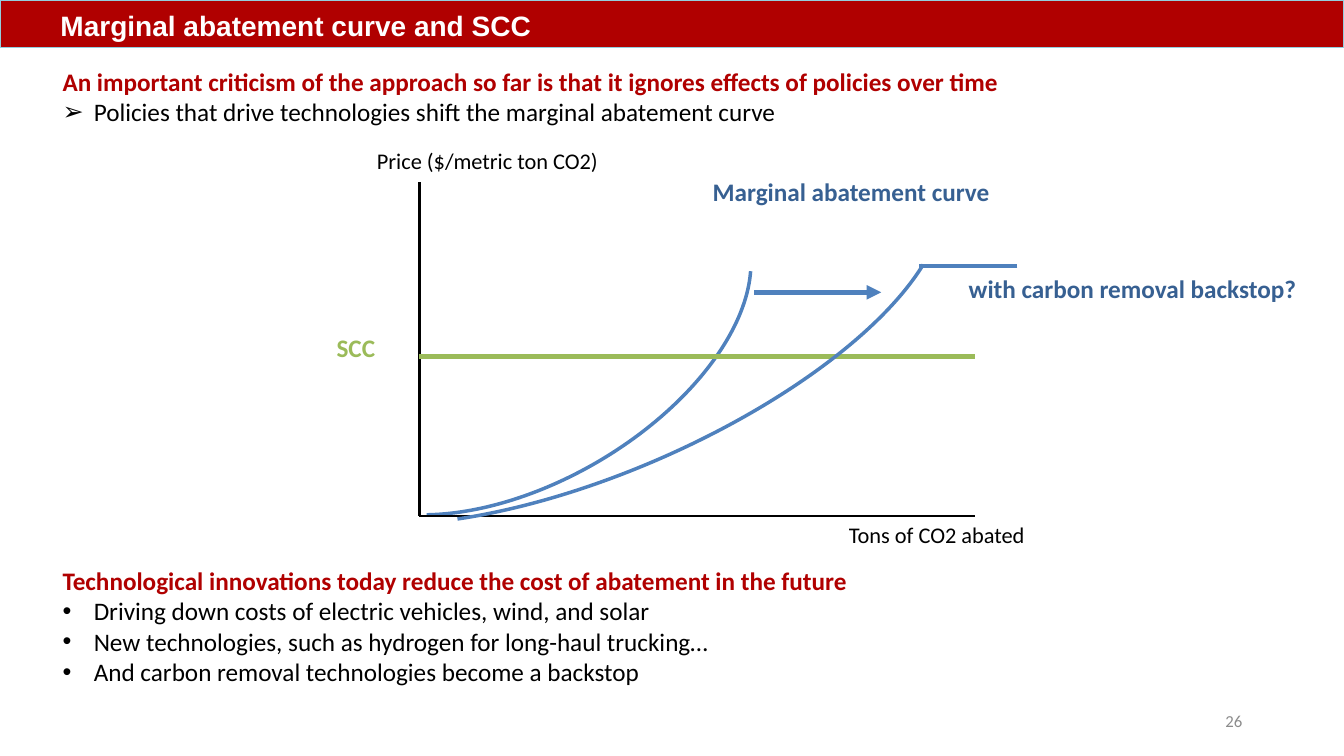
from pptx import Presentation
from pptx import util as u
from pptx.dml.color import RGBColor
from pptx.enum import shapes, text
from pptx.oxml.ns import qn
from lxml import etree

RED, BLUE, NAVY, GREEN = "B00000", "4F81BD", "376092", "9BBB59"
BLACK, WHITE, GRAY = "000000", "FFFFFF", "8C8C8C"
ORIGIN_X, ORIGIN_Y, END_X = 4.16, 5.12, 9.67


def rgb(code):
    """Turn a hex string into a colour."""
    return RGBColor.from_string(code)


def place(shape, left, top, width, height):
    """Set the position and size of a shape."""
    shape.left, shape.top = u.Inches(left), u.Inches(top)
    shape.width, shape.height = u.Inches(width), u.Inches(height)


def style(para, size, color, bold=False, font="Calibri"):
    """Format the runs of a paragraph."""
    for run in para.runs:
        run.font.name, run.font.size, run.font.bold = font, u.Pt(size), bold
        run.font.color.rgb = rgb(color)


def label(slide, words, box, size, color, bold=False):
    """Add a text box with one line and return it."""
    shape = slide.shapes.add_textbox(*map(u.Inches, box))
    frame = shape.text_frame
    frame.word_wrap = True
    frame.text = words
    style(frame.paragraphs[0], size, color, bold)
    return shape


def line(slide, start, end, color, width, arrow=False):
    """Draw a straight line, with an arrowhead at its end if asked."""
    conn = slide.shapes.add_connector(
        shapes.MSO_CONNECTOR.STRAIGHT, *map(u.Inches, start + end))
    conn.line.color.rgb = rgb(color)
    conn.line.width = u.Pt(width)
    if arrow:
        etree.SubElement(conn.line._get_or_add_ln(), qn("a:tailEnd"), type="triangle")
    etree.SubElement(conn._element.spPr, qn("a:effectLst"))


def curve(slide, box, turn):
    """Draw a rising abatement curve as a rotated arc."""
    arc = slide.shapes.add_shape(shapes.MSO_SHAPE.ARC, *map(u.Inches, box))
    arc.adjustments[0], arc.adjustments[1] = 7.213, 90.6
    arc.rotation = turn
    arc.shadow.inherit = False
    arc.fill.background()
    arc.line.color.rgb = rgb(BLUE)
    arc.line.width = u.Pt(2.5)


def title(slide, words):
    """Turn the title placeholder into the red band."""
    band = slide.shapes.title
    place(band, 0, 0, 13.33, 0.47)
    band.fill.solid()
    band.fill.fore_color.rgb = rgb(RED)
    band.line.color.rgb = rgb("93CDDD")
    band.line.width = u.Pt(0)
    frame = band.text_frame
    frame.text = words
    frame.auto_size = text.MSO_AUTO_SIZE.NONE
    frame.vertical_anchor = text.MSO_ANCHOR.BOTTOM
    frame.margin_left = u.Inches(0.6)
    para = frame.paragraphs[0]
    para.alignment = text.PP_ALIGN.LEFT
    style(para, 20, WHITE, True, "Arial")


def points(body, box, head, items, mark):
    """Fill a body placeholder with a red heading and marked points."""
    place(body, *box)
    frame = body.text_frame
    frame.text = "\n".join([head] + items)
    frame.auto_size = text.MSO_AUTO_SIZE.NONE
    frame.word_wrap = True
    for i, para in enumerate(frame.paragraphs):
        props = para._p.get_or_add_pPr()
        indent = u.Inches(0.31) if i else 0
        props.set("marL", str(indent))
        props.set("indent", str(-indent))
        if i:
            etree.SubElement(props, qn("a:buFont"), typeface="Arial")
            etree.SubElement(props, qn("a:buChar"), char=mark)
        else:
            etree.SubElement(props, qn("a:buNone"))
        para.space_before = u.Pt(0)
        style(para, 18, BLACK if i else RED, not i)


def main():
    """Build the slide and save it."""
    prs = Presentation()
    prs.slide_width, prs.slide_height = u.Inches(13.33), u.Inches(7.5)
    slide = prs.slides.add_slide(prs.slide_layouts[3])
    title(slide, "Marginal abatement curve and SCC")
    points(slide.placeholders[1], (0.52, 0.61, 9.57, 0.71),
           "An important criticism of the approach so far is that it ignores effects of policies over time",
           ["Policies that drive technologies shift the marginal abatement curve"], "➢")
    points(slide.placeholders[2], (0.52, 5.56, 11.78, 1.31),
           "Technological innovations today reduce the cost of abatement in the future",
           ["Driving down costs of electric vehicles, wind, and solar",
            "New technologies, such as hydrogen for long-haul trucking…",
            "And carbon removal technologies become a backstop"], "•")

    curve(slide, (2.81, 2.06, 4.86, 2.71), 329.8)
    line(slide, (ORIGIN_X, 1.81), (ORIGIN_X, ORIGIN_Y), BLACK, 2)
    line(slide, (END_X, ORIGIN_Y), (ORIGIN_X, ORIGIN_Y), BLACK, 2)
    line(slide, (ORIGIN_X, 3.54), (END_X, 3.54), GREEN, 3.5)
    curve(slide, (2.36, 1.87, 7.24, 2.8), 336.5)
    line(slide, (7.48, 2.9), (8.74, 2.9), BLUE, 3.5, arrow=True)
    line(slide, (10.09, 2.64), (9.12, 2.64), BLUE, 2.5)

    label(slide, "Price ($/metric ton CO2)", (3.64, 1.41, 3.03, 0.37), 16, BLACK)
    label(slide, "Tons of CO2 abated", (8.32, 5.12, 3.03, 0.37), 16, BLACK)
    label(slide, "Marginal abatement curve", (6.97, 1.7, 3.87, 0.4), 18, NAVY, True)
    label(slide, "with carbon removal backstop?", (9.51, 2.66, 3.67, 0.4), 18, NAVY, True)
    label(slide, "SCC", (3.24, 3.25, 0.8, 0.4), 18, GREEN, True)
    page = label(slide, "26", (9.42, 6.95, 3, 0.4), 12, GRAY).text_frame
    page.vertical_anchor = text.MSO_ANCHOR.MIDDLE
    page.paragraphs[0].alignment = text.PP_ALIGN.RIGHT
    prs.save("out.pptx")


if __name__ == "__main__":
    main()
